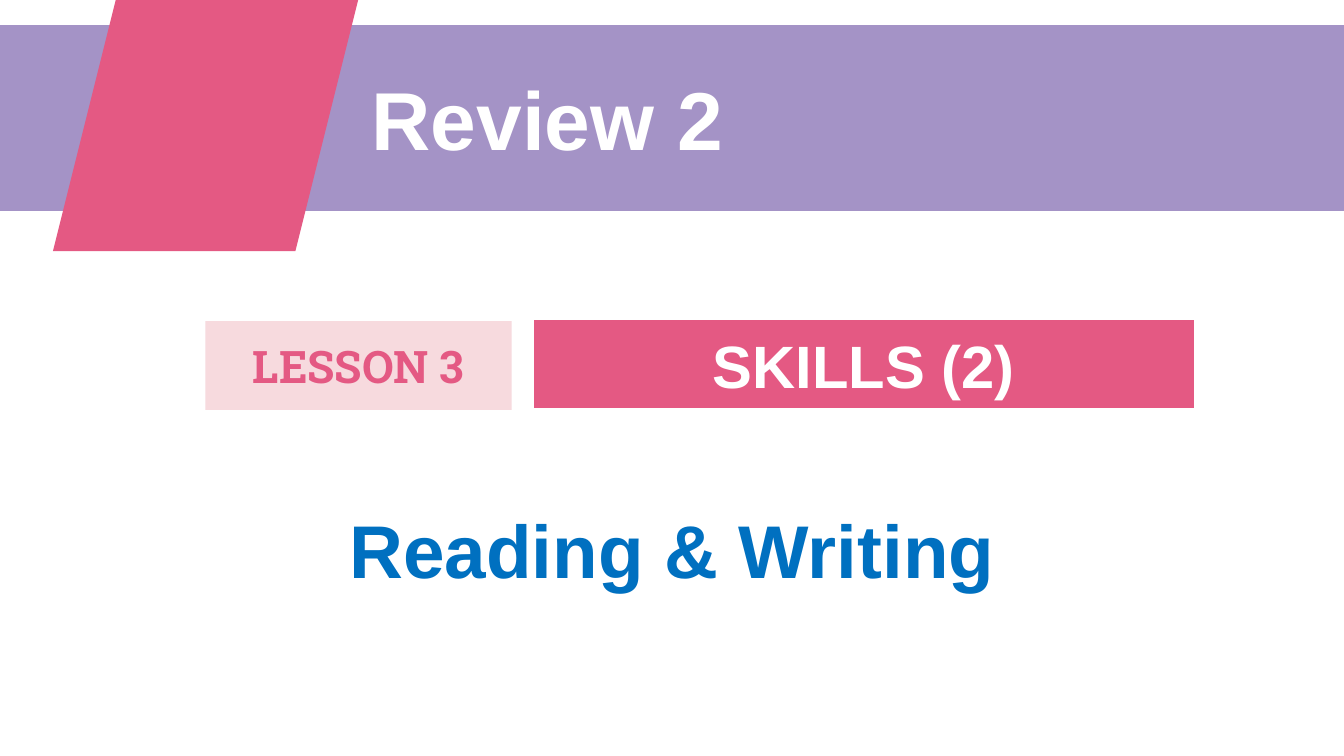
from pptx import Presentation
from pptx.dml.color import RGBColor
from pptx.enum import shapes, text
from pptx.util import Pt

WHITE = RGBColor(0xFF, 0xFF, 0xFF)
PURPLE = RGBColor(0xA4, 0x93, 0xC6)
PINK = RGBColor(0xE4, 0x59, 0x83)
BLUSH = RGBColor(0xF7, 0xDA, 0xDE)
BLUE = RGBColor(0x00, 0x70, 0xC0)
RECT = shapes.MSO_SHAPE.RECTANGLE
SLANT = shapes.MSO_SHAPE.PARALLELOGRAM
LEFT, MID = text.PP_ALIGN.LEFT, text.PP_ALIGN.CENTER

deck = Presentation()
deck.slide_width, deck.slide_height = Pt(720), Pt(405)
slide = deck.slides.add_slide(deck.slide_layouts[6])


def block(kind, x, y, w, h, fill):
    shape = slide.shapes.add_shape(kind, Pt(x), Pt(y), Pt(w), Pt(h))
    shape.shadow.inherit = False
    shape.fill.solid()
    shape.fill.fore_color.rgb = fill
    shape.line.fill.background()
    return shape


def write(shape, words, size, color, font="Arial", align=MID,
          anchor=text.MSO_ANCHOR.MIDDLE):
    frame = shape.text_frame
    frame.word_wrap = True
    frame.vertical_anchor = anchor
    para = frame.paragraphs[0]
    para.alignment = align
    run = para.add_run()
    run.text = words
    run.font.name, run.font.size, run.font.bold = font, Pt(size), True
    run.font.color.rgb = color


# Header band with slanted tab
block(RECT, 0, 13.5, 720, 99.5, PURPLE)
block(SLANT, 28.4, 0, 163.5, 134.5, PINK)

# Lesson bar and its label
skill = block(RECT, 285.5, 170.6, 354.7, 49, PINK)
skill.line.color.rgb = WHITE
skill.line.width = Pt(1.5)
write(skill, "SKILLS (2)", 32, WHITE)
lesson = block(RECT, 110.1, 172, 164, 47.6, BLUSH)
write(lesson, "LESSON 3", 24, PINK, font="Roboto Slab")

# Title and topic
for words, x, y, w, h, size, color, align in (
    ("Review 2", 192, 33, 419, 60.5, 44, WHITE, LEFT),
    ("Reading & Writing", 180, 266.4, 360, 55.4, 40, BLUE, MID),
):
    area = slide.shapes.add_textbox(Pt(x), Pt(y), Pt(w), Pt(h))
    write(area, words, size, color, align=align, anchor=text.MSO_ANCHOR.TOP)
    area.text_frame.auto_size = text.MSO_AUTO_SIZE.SHAPE_TO_FIT_TEXT

deck.save("out.pptx")
